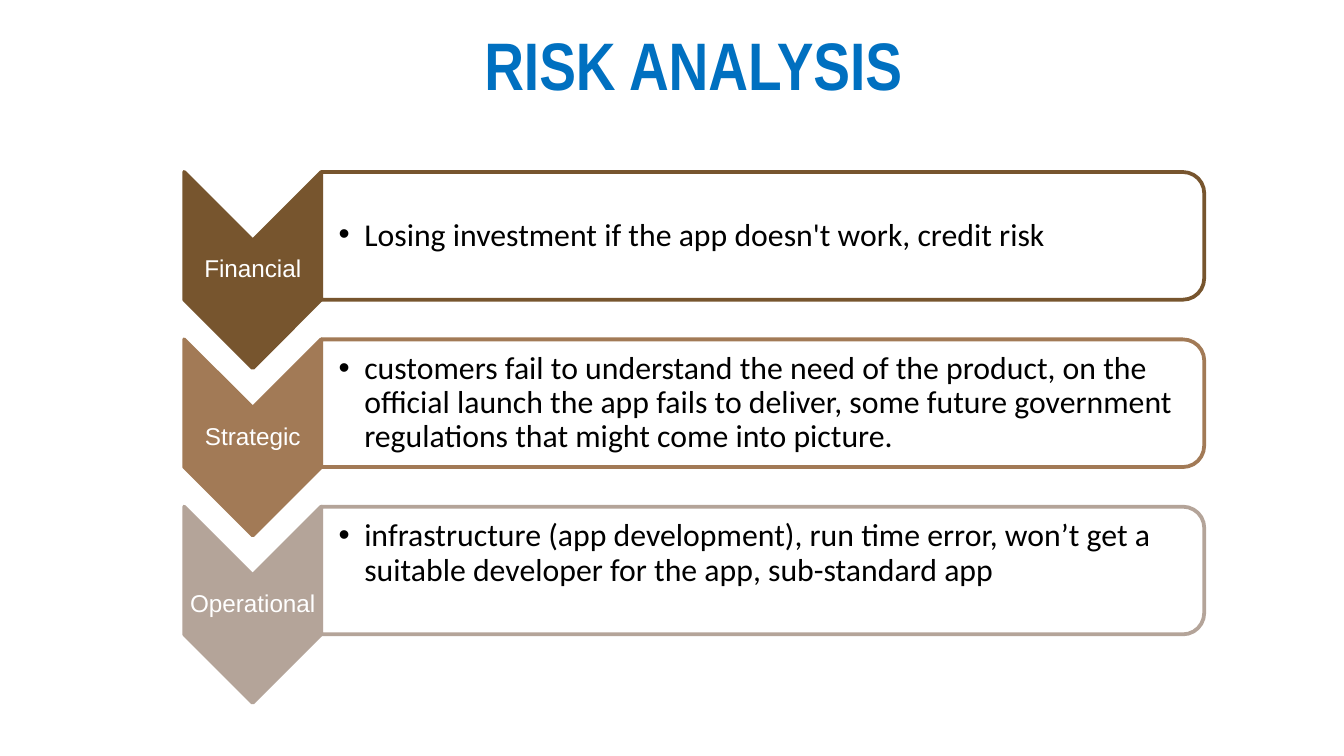
import lxml.etree
import pptx
import pptx.dml.color
import pptx.enum.shapes
import pptx.enum.text
import pptx.oxml.ns
import pptx.util

RGBColor = pptx.dml.color.RGBColor
Shape = pptx.enum.shapes.MSO_SHAPE
Align = pptx.enum.text.PP_ALIGN
qn = pptx.oxml.ns.qn

BLUE = RGBColor(0x00, 0x70, 0xC0)
BLACK = RGBColor(0x00, 0x00, 0x00)
WHITE = RGBColor(0xFF, 0xFF, 0xFF)
DARK_BROWN = RGBColor(0x77, 0x55, 0x2E)
BROWN = RGBColor(0xA2, 0x7A, 0x56)
TAUPE = RGBColor(0xB4, 0xA4, 0x99)

# The grid has 100 columns and 56.25 rows of square cells.
CELL = 0.1
COLUMNS, ROWS = 100, 56.25
FIRST_ROW, ROW_STEP = 12.8, 12.45
CHEVRON_LEFT, CHEVRON_WIDTH, CHEVRON_HEIGHT = 13.7, 10.2, 14.6
PANEL_LEFT, PANEL_WIDTH, PANEL_HEIGHT = 23.9, 65.7, 9.5

# Name, colour, description, space kept free below the description
RISKS = [
    ("Financial", DARK_BROWN,
     "Losing investment if the app doesn't work, credit risk", 0.1),
    ("Strategic", BROWN,
     "customers fail to understand the need of the product, on the official "
     "launch the app fails to deliver, some future government regulations "
     "that might come into picture.", 0.1),
    ("Operational", TAUPE,
     "infrastructure (app development), run time error, won’t get a suitable "
     "developer for the app, sub-standard app", 2.6),
]


def cells(count):
    return pptx.util.Inches(count * CELL)


def write_text(shape, text, *, font, size, color, bold=False, align=Align.LEFT,
               spacing=0.9, margins=(0.1, 0.1, 0.1, 0.1), bullet=False):
    """Fill the shape with one paragraph; margins run left, top, right, bottom."""
    frame = shape.text_frame
    frame.word_wrap = True
    frame.auto_size = pptx.enum.text.MSO_AUTO_SIZE.NONE
    frame.vertical_anchor = pptx.enum.text.MSO_ANCHOR.MIDDLE
    (frame.margin_left, frame.margin_top,
     frame.margin_right, frame.margin_bottom) = map(cells, margins)
    paragraph = frame.paragraphs[0]
    paragraph.alignment = align
    paragraph.line_spacing = spacing
    run = paragraph.add_run()
    run.text = text
    run.font.name = font
    run.font.size = pptx.util.Pt(size)
    run.font.bold = bold
    run.font.color.rgb = color
    if bullet:
        add_bullet(paragraph, cells(1.9))


def add_bullet(paragraph, indent):
    properties = paragraph._p.get_or_add_pPr()
    properties.set("marL", str(indent))
    properties.set("indent", str(-indent))
    lxml.etree.SubElement(properties, qn("a:buFont")).set("typeface", "Arial")
    lxml.etree.SubElement(properties, qn("a:buChar")).set("char", "•")


class RiskSlide:
    """Holds the style and the slide; boxes are (left, top, width, height) in cells."""

    title_style = dict(font="Arial Narrow", size=36, color=BLUE, bold=True,
                       align=Align.CENTER, spacing=1, margins=(1, 1, 1, 1))
    label_style = dict(font="Arial", size=13, color=WHITE, align=Align.CENTER)
    body_style = dict(font="Calibri", size=17, color=BLACK, bullet=True)
    line_width = pptx.util.Pt(2)

    def __init__(self, presentation):
        self.slide = presentation.slides.add_slide(presentation.slide_layouts[5])

    def title(self, text, box):
        shape = self.slide.shapes.title
        shape.left, shape.top, shape.width, shape.height = map(cells, box)
        write_text(shape, text, **self.title_style)

    def text(self, text, box, **style):
        write_text(self.slide.shapes.add_textbox(*map(cells, box)), text, **style)

    def turned_shape(self, kind, box, fill, line, adjustments, opacity=100):
        """Add a shape turned clockwise by 90 degrees that covers the box."""
        left, top, width, height = box
        shift = (width - height) / 2
        shape = self.slide.shapes.add_shape(
            kind, *map(cells, (left + shift, top - shift, height, width)))
        shape.rotation = 90
        shape.shadow.inherit = False
        for index, value in enumerate(adjustments):
            shape.adjustments[index] = value
        shape.fill.solid()
        shape.fill.fore_color.rgb = fill
        shape.line.color.rgb = line
        shape.line.width = self.line_width
        if opacity < 100:
            color = shape._element.spPr.find(qn("a:solidFill"))[0]
            lxml.etree.SubElement(color, qn("a:alpha")).set("val", str(opacity * 1000))

    def chevron(self, label, top, color):
        self.turned_shape(Shape.CHEVRON,
                          (CHEVRON_LEFT, top, CHEVRON_WIDTH, CHEVRON_HEIGHT),
                          color, color, [0.5])
        self.text(label, (CHEVRON_LEFT, top + 5.1, CHEVRON_WIDTH, 4.4),
                  **self.label_style)

    def panel(self, text, top, color, space_below):
        self.turned_shape(Shape.ROUND_2_SAME_RECTANGLE,
                          (PANEL_LEFT, top, PANEL_WIDTH, PANEL_HEIGHT),
                          WHITE, color, [0.167, 0], opacity=90)
        self.text(text, (PANEL_LEFT, top + 0.45, PANEL_WIDTH - 0.5, PANEL_HEIGHT - 0.9),
                  margins=(1.3, 0.1, 0.1, space_below), **self.body_style)


def main():
    presentation = pptx.Presentation()
    presentation.slide_width = cells(COLUMNS)
    presentation.slide_height = cells(ROWS)
    slide = RiskSlide(presentation)
    slide.title("RISK ANALYSIS", (5, 1.6, 93.2, 6.3))
    for index, (name, color, description, space_below) in enumerate(RISKS):
        top = FIRST_ROW + index * ROW_STEP
        slide.chevron(name, top, color)
        slide.panel(description, top, color, space_below)
    presentation.save("out.pptx")


if __name__ == "__main__":
    main()
